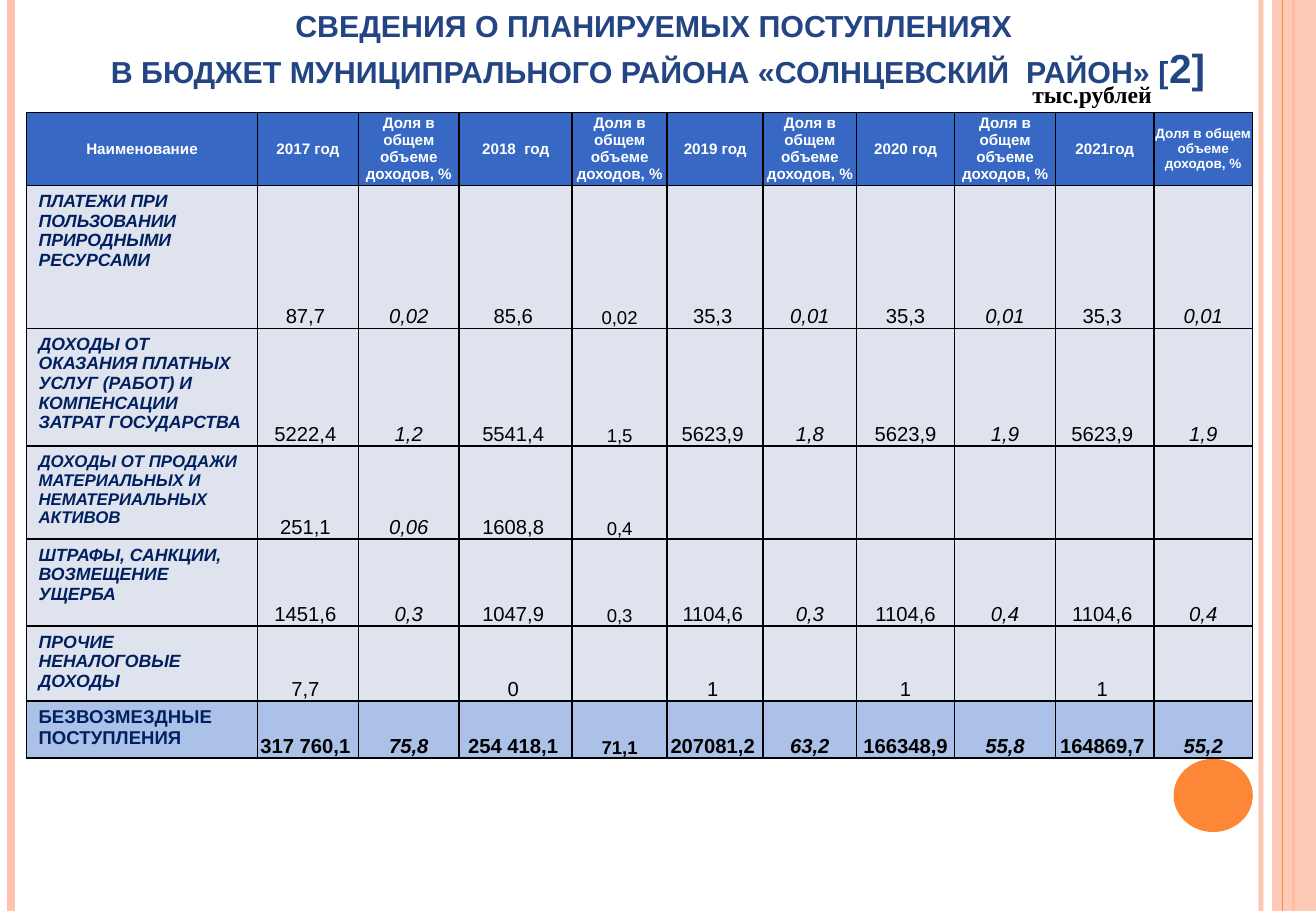
from lxml.etree import SubElement
from pptx import Presentation
from pptx.dml.color import RGBColor
from pptx.enum.shapes import MSO_CONNECTOR, MSO_SHAPE
from pptx.enum.text import MSO_ANCHOR, PP_ALIGN
from pptx.oxml import parse_xml
from pptx.oxml.ns import nsdecls, qn
from pptx.util import Pt

TITLE = ["СВЕДЕНИЯ О ПЛАНИРУЕМЫХ ПОСТУПЛЕНИЯХ ",
         "В БЮДЖЕТ МУНИЦИПРАЛЬНОГО РАЙОНА «СОЛНЦЕВСКИЙ  РАЙОН» ["]
MARK = "2]"
UNIT = "тыс.рублей"
SHARE = "Доля в общем объеме доходов, %"
YEARS = ["2017 год", "2018  год", "2019 год", "2020 год", "2021год"]
HEAD = ["Наименование"] + [text for year in YEARS for text in (year, SHARE)]
ROWS = [
    ["ПЛАТЕЖИ ПРИ ПОЛЬЗОВАНИИ ПРИРОДНЫМИ РЕСУРСАМИ",
     "87,7", "0,02", "85,6", "0,02", "35,3", "0,01", "35,3", "0,01", "35,3", "0,01"],
    ["ДОХОДЫ ОТ ОКАЗАНИЯ ПЛАТНЫХ УСЛУГ (РАБОТ) И КОМПЕНСАЦИИ ЗАТРАТ ГОСУДАРСТВА",
     "5222,4", "1,2", "5541,4", "1,5", "5623,9", "1,8", "5623,9", "1,9", "5623,9", "1,9"],
    ["ДОХОДЫ ОТ ПРОДАЖИ МАТЕРИАЛЬНЫХ И НЕМАТЕРИАЛЬНЫХ АКТИВОВ",
     "251,1", "0,06", "1608,8", "0,4", "", "", "", "", "", ""],
    ["ШТРАФЫ, САНКЦИИ, ВОЗМЕЩЕНИЕ УЩЕРБА",
     "1451,6", "0,3", "1047,9", "0,3", "1104,6", "0,3", "1104,6", "0,4", "1104,6", "0,4"],
    ["ПРОЧИЕ НЕНАЛОГОВЫЕ ДОХОДЫ",
     "7,7", "", "0", "", "1", "", "1", "", "1", ""],
    ["БЕЗВОЗМЕЗДНЫЕ ПОСТУПЛЕНИЯ",
     "317 760,1", "75,8", "254 418,1", "71,1", "207081,2", "63,2",
     "166348,9", "55,8", "164869,7", "55,2"],
]
LABELS = [10.5, 10.5, 10, 10.5, 10.5, 11]
WIDTHS = [136.9, 59.8, 59.8, 67, 56.3, 56.9, 55.4, 58.1, 59.8, 58.4, 58.4]
HEIGHTS = [43.3, 84.7, 69.9, 55.1, 51.6, 44.4, 33.8]

WHITE = RGBColor(0xFF, 0xFF, 0xFF)
BLACK = RGBColor(0, 0, 0)
PEACH = RGBColor(0xFE, 0xC3, 0xAE)
ORANGE = RGBColor(0xFE, 0x86, 0x37)
BLUE = RGBColor(0x36, 0x68, 0xC4)
PALE = RGBColor(0xDF, 0xE3, 0xEE)
SKY = RGBColor(0xAC, 0xC1, 0xE8)
NAVY = RGBColor(0x00, 0x20, 0x60)
INK = RGBColor(0x24, 0x45, 0x83)

WIDE, HIGH = 780, 540
LINES = [(747.4, 3, PEACH, 93), (6.5, 4.5, PEACH, 100),
         (766.8, 1.5, ORANGE, 100), (760.3, 0.75, ORANGE, 100)]


def put(para, text, size=12, color=BLACK, bold=False, italic=False,
        font="Arial", align=PP_ALIGN.CENTER):
    para.alignment = align
    run = para.add_run()
    run.text = text
    run.font.size = Pt(size)
    run.font.name = font
    run.font.bold = bold
    run.font.italic = italic
    run.font.color.rgb = color


def fade(props, share):
    if share < 100:
        color = next(props.iter(qn("a:srgbClr")))
        SubElement(color, qn("a:alpha")).set("val", str(share * 1000))


def rule(x, width, color, share):
    line = slide.shapes.add_connector(MSO_CONNECTOR.STRAIGHT, Pt(x), Pt(0), Pt(x), Pt(HIGH))
    line.line.width = Pt(width)
    line.line.color.rgb = color
    props = line._element.spPr
    fade(props, share)
    SubElement(props, qn("a:effectLst"))


def block(kind, x, y, width, height, color, share=100):
    shape = slide.shapes.add_shape(kind, Pt(x), Pt(y), Pt(width), Pt(height))
    shape.shadow.inherit = False
    shape.fill.solid()
    shape.fill.fore_color.rgb = color
    shape.line.fill.background()
    fade(shape._element.spPr, share)


def box(x, y, width, height):
    frame = slide.shapes.add_textbox(Pt(x), Pt(y), Pt(width), Pt(height)).text_frame
    frame.word_wrap = True
    frame.vertical_anchor = MSO_ANCHOR.MIDDLE
    return frame.paragraphs[0]


def paint(cell, color):
    props = cell._tc.get_or_add_tcPr()
    for side in "LRTB":
        props.append(parse_xml(
            f'<a:ln{side} {nsdecls("a")} w="{Pt(1)}"><a:solidFill>'
            f'<a:srgbClr val="{BLACK}"/></a:solidFill></a:ln{side}>'))
    cell.fill.solid()
    cell.fill.fore_color.rgb = color


def pad(cell, left, top, right, low):
    cell.margin_left, cell.margin_top = Pt(left), Pt(top)
    cell.margin_right, cell.margin_bottom = Pt(right), Pt(low)


deck = Presentation()
deck.slide_width, deck.slide_height = Pt(WIDE), Pt(HIGH)
slide = deck.slides.add_slide(deck.slide_layouts[6])

for item in LINES[:3]:
    rule(*item)
block(MSO_SHAPE.RECTANGLE, 754, 0, 26, HIGH, PEACH, 87)
rule(*LINES[3])
block(MSO_SHAPE.OVAL, 695.6, 449.8, 47, 43.4, ORANGE)

grid = slide.shapes.add_table(len(HEIGHTS), len(WIDTHS), Pt(15.7), Pt(66.6),
                              Pt(sum(WIDTHS)), Pt(sum(HEIGHTS))).table
grid.horz_banding = False
for col, width in zip(grid.columns, WIDTHS):
    col.width = Pt(width)
for row, height in zip(grid.rows, HEIGHTS):
    row.height = Pt(height)

for c, text in enumerate(HEAD):
    cell = grid.cell(0, c)
    paint(cell, BLUE)
    pad(cell, 0, 0, 0, 0)
    cell.vertical_anchor = MSO_ANCHOR.MIDDLE
    put(cell.text_frame.paragraphs[0], text, bold=True, color=WHITE,
        size=8 if c == len(HEAD) - 1 else 9)

for r, (row, size) in enumerate(zip(ROWS, LABELS), 1):
    total = r == len(ROWS)
    for c, text in enumerate(row):
        cell = grid.cell(r, c)
        paint(cell, SKY if total else PALE)
        para = cell.text_frame.paragraphs[0]
        if c == 0:
            put(para, text, size=size, color=NAVY, bold=True,
                italic=not total, align=PP_ALIGN.LEFT)
        elif text:
            share = c % 2 == 0
            if share or c == 7:
                pad(cell, 0.7, 0.7, 0.7, 0)
            else:
                pad(cell, 0, 0, 2.9, 0)
            cell.vertical_anchor = MSO_ANCHOR.BOTTOM
            put(para, text, size=11 if c == 4 else 12, bold=total,
                italic=share and c != 4)

put(box(594, 43.4, 106.6, 24.5), UNIT, size=14, bold=True, font="Times New Roman")
title = box(0, 0, WIDE, 58.3)
put(title, TITLE[0], size=18, color=INK, bold=True)
title.add_line_break()
put(title, TITLE[1], size=18, color=INK, bold=True)
put(title, MARK, size=24, color=INK, bold=True)

deck.save("out.pptx")
